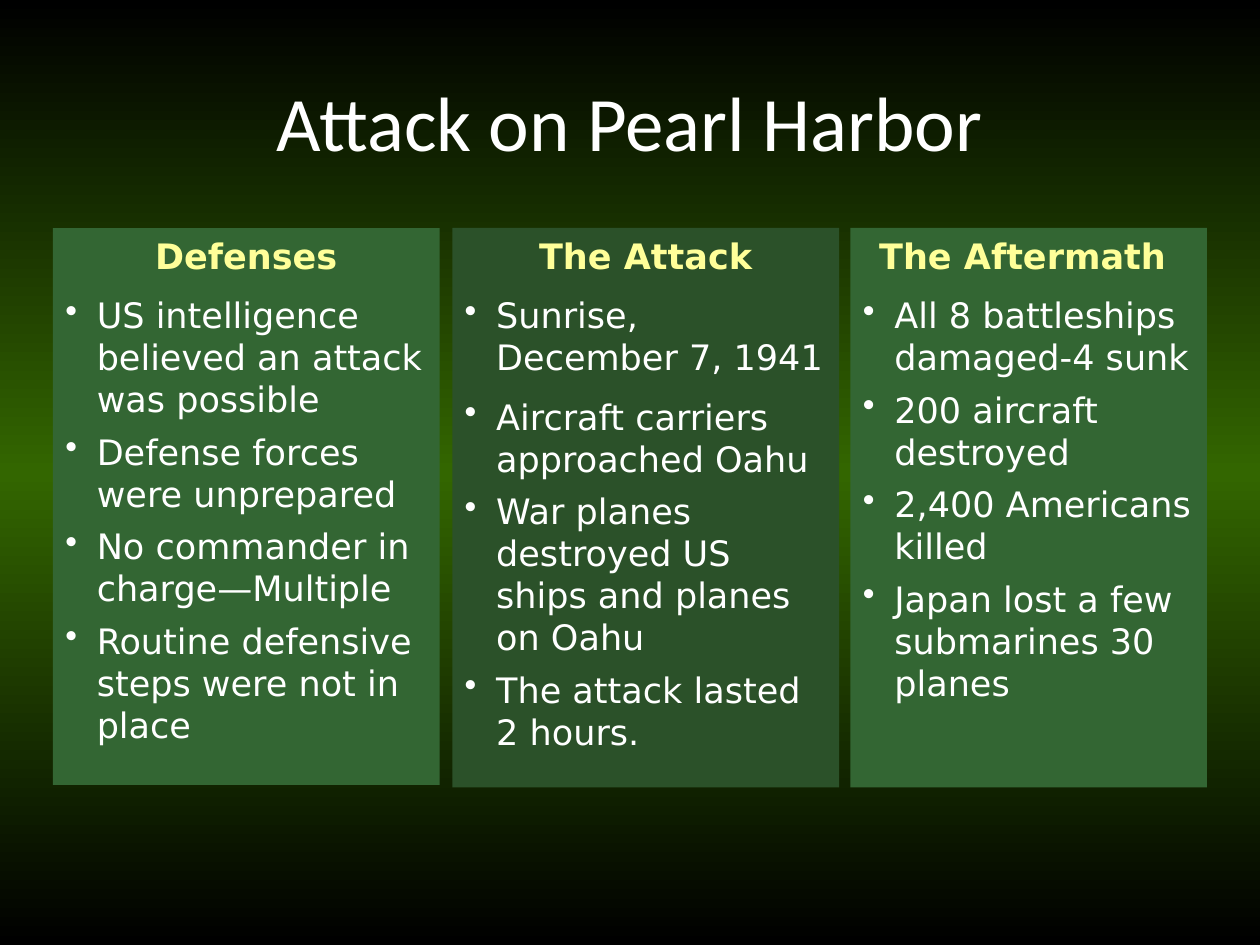
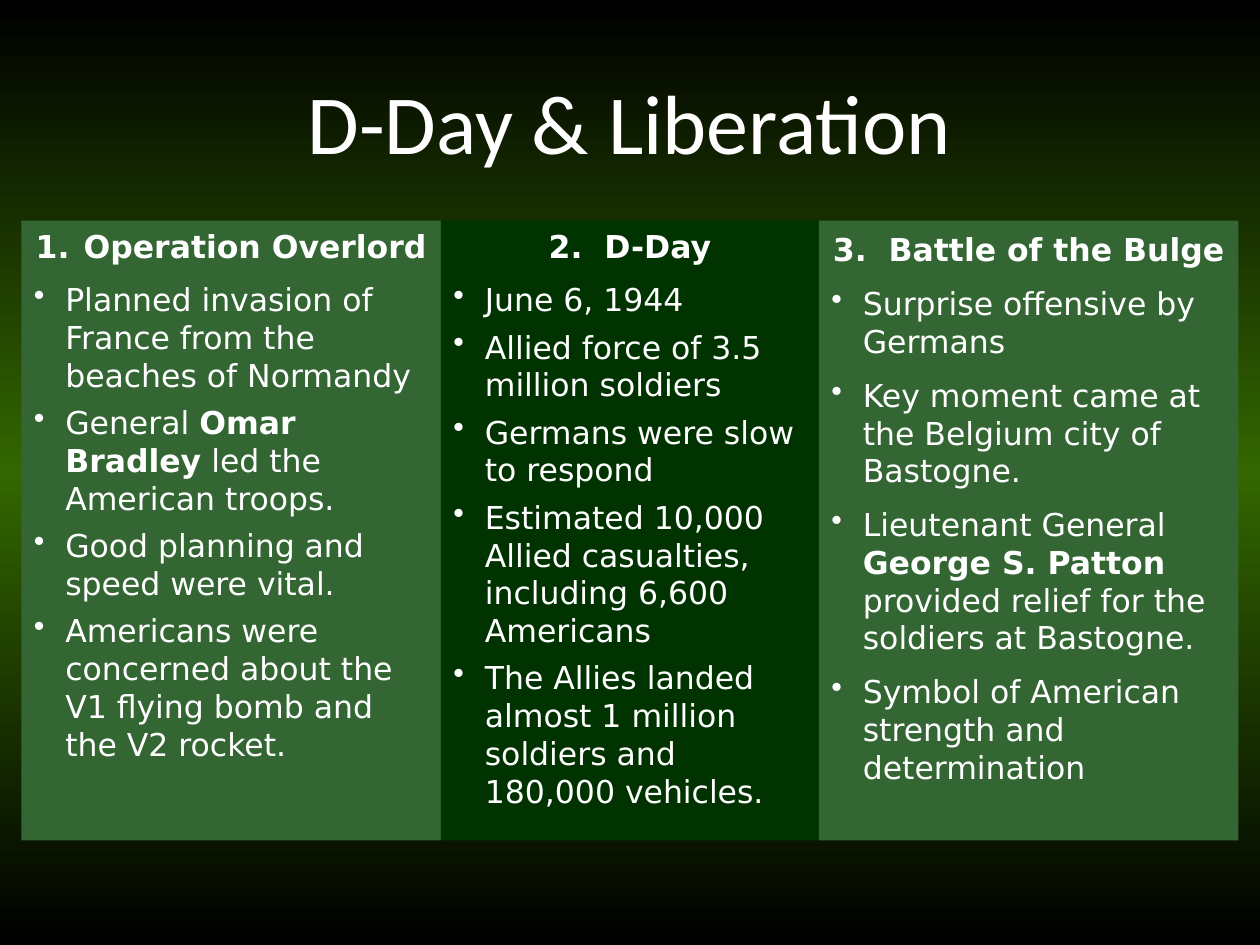
from lxml import etree
from pptx import Presentation
from pptx.dml.color import RGBColor
from pptx.enum import shapes, text
from pptx.oxml import ns
from pptx.util import Inches, Pt

WHITE, CREAM = "FFFFFF", "FFFF99"
LEAF, MOSS, PINE = "336633", "2B5129", "003300"
GLOW = [(0, "000000"), (50, "336600"), (100, "000000")]
SANS = "DejaVu Sans"


def tag(top, name, **attrs):
    node = etree.SubElement(top, ns.qn("a:" + name))
    for key, val in attrs.items():
        node.set(key, str(val))
    return node


def write(para, words, size, face, hue, bold=False):
    run = para.add_run()
    run.text = words
    look = {"size": Pt(size), "name": face, "bold": bold}
    for key, val in look.items():
        setattr(run.font, key, val)
    run.font.color.rgb = RGBColor.from_string(hue)


pages = [
    {
        "title": "Attack on Pearl Harbor", "big": 44, "span": (0.25, 9.5),
        "top": 1.81, "size": 20, "hue": CREAM,
        "cols": [
            {"box": (0.42, 3.07, 4.42), "fill": LEAF, "head": "Defenses",
             "items": ["US intelligence believed an attack was possible",
                       "Defense forces were unprepared",
                       "No commander in charge—Multiple",
                       "Routine defensive steps were not in place"]},
            {"box": (3.59, 3.07, 4.44), "fill": MOSS, "head": "The Attack",
             "wide": 2,
             "items": ["Sunrise, December 7, 1941",
                       "Aircraft carriers approached Oahu",
                       "War planes destroyed US ships and planes on Oahu",
                       "The attack lasted 2 hours."]},
            {"box": (6.75, 2.83, 4.44), "fill": LEAF, "head": "The Aftermath ",
             "items": ["All 8 battleships damaged-4 sunk",
                       "200 aircraft destroyed",
                       "2,400 Americans killed",
                       "Japan lost a few submarines 30 planes"]},
        ],
    },
    {
        "title": "D-Day & Liberation", "big": 48, "span": (0.58, 8.83),
        "top": 1.75, "size": 18, "hue": WHITE,
        "cols": [
            {"box": (0.17, 3.33, 4.92), "fill": LEAF,
             "head": "Operation Overlord", "hang": 0.38, "count": True,
             "items": ["Planned invasion of France from the beaches of Normandy",
                       "General *Omar Bradley* led the American troops.",
                       "Good planning and speed were vital.",
                       "Americans were concerned about the V1 flying bomb "
                       "and the V2 rocket."]},
            {"box": (3.5, 3, 4.92), "fill": PINE,
             "head": "2.  D-Day", "hang": 0.38,
             "items": ["June 6, 1944",
                       "Allied force of 3.5 million soldiers",
                       "Germans were slow to respond",
                       "Estimated 10,000 Allied casualties, "
                       "including 6,600 Americans",
                       "The Allies landed almost 1 million soldiers "
                       "and 180,000 vehicles."]},
            {"box": (6.5, 3.33, 4.92), "fill": LEAF,
             "head": "3.  Battle of the Bulge", "tail": 20, "wide": 4,
             "items": ["Surprise offensive by Germans",
                       "Key moment came at the Belgium city of Bastogne.",
                       "Lieutenant General *George S. Patton* provided relief "
                       "for the soldiers at Bastogne.",
                       "Symbol of American strength and determination"]},
        ],
    },
]

deck = Presentation()
deck.slide_width, deck.slide_height = Inches(10), Inches(7.5)

back = deck.slide_master.background.fill
back.gradient()
back.gradient_angle = 90
stops = deck.slide_master.element.find(".//" + ns.qn("a:gsLst"))
for old in list(stops):
    stops.remove(old)
for spot, hue in GLOW:
    tag(tag(stops, "gs", pos=spot * 1000), "srgbClr", val=hue)

for page in pages:
    slide = deck.slides.add_slide(deck.slide_layouts[6])
    left, width = page["span"]
    title = slide.shapes.add_textbox(
        Inches(left), Inches(0.67), Inches(width), Inches(0.58)).text_frame
    title.word_wrap = True
    title.vertical_anchor = text.MSO_ANCHOR.MIDDLE
    title.paragraphs[0].alignment = text.PP_ALIGN.CENTER
    write(title.paragraphs[0], page["title"], page["big"], "Calibri", WHITE)

    for col in page["cols"]:
        left, width, high = col["box"]
        panel = slide.shapes.add_shape(
            shapes.MSO_SHAPE.RECTANGLE, Inches(left), Inches(page["top"]),
            Inches(width), Inches(high))
        panel.shadow.inherit = False
        panel.fill.solid()
        panel.fill.fore_color.rgb = RGBColor.from_string(col["fill"])
        panel.line.fill.background()
        frame = panel.text_frame
        frame.word_wrap = True
        frame.vertical_anchor = text.MSO_ANCHOR.TOP

        for row, words in enumerate([col["head"]] + col["items"]):
            para = frame.add_paragraph() if row else frame.paragraphs[0]
            para.alignment = text.PP_ALIGN.LEFT if row else text.PP_ALIGN.CENTER
            hang = Inches(0.25 if row else col.get("hang", 0.25))
            props = para._p.get_or_add_pPr()
            props.set("marL", str(hang))
            props.set("indent", str(-hang))
            gap = 50 if row <= col.get("wide", 1) else 30
            tag(tag(props, "spcBef"), "spcPct", val=gap * 1000)
            if row:
                tag(props, "buChar", char="•")
                for part, piece in enumerate(words.split("*")):
                    write(para, piece, page["size"], SANS, WHITE, part % 2 == 1)
            else:
                if col.get("count"):
                    tag(props, "buAutoNum", type="arabicPeriod")
                else:
                    tag(props, "buNone")
                write(para, words, page["size"], SANS, page["hue"], True)
                if "tail" in col:
                    write(para, " ", col["tail"], SANS, WHITE)

deck.save("out.pptx")
